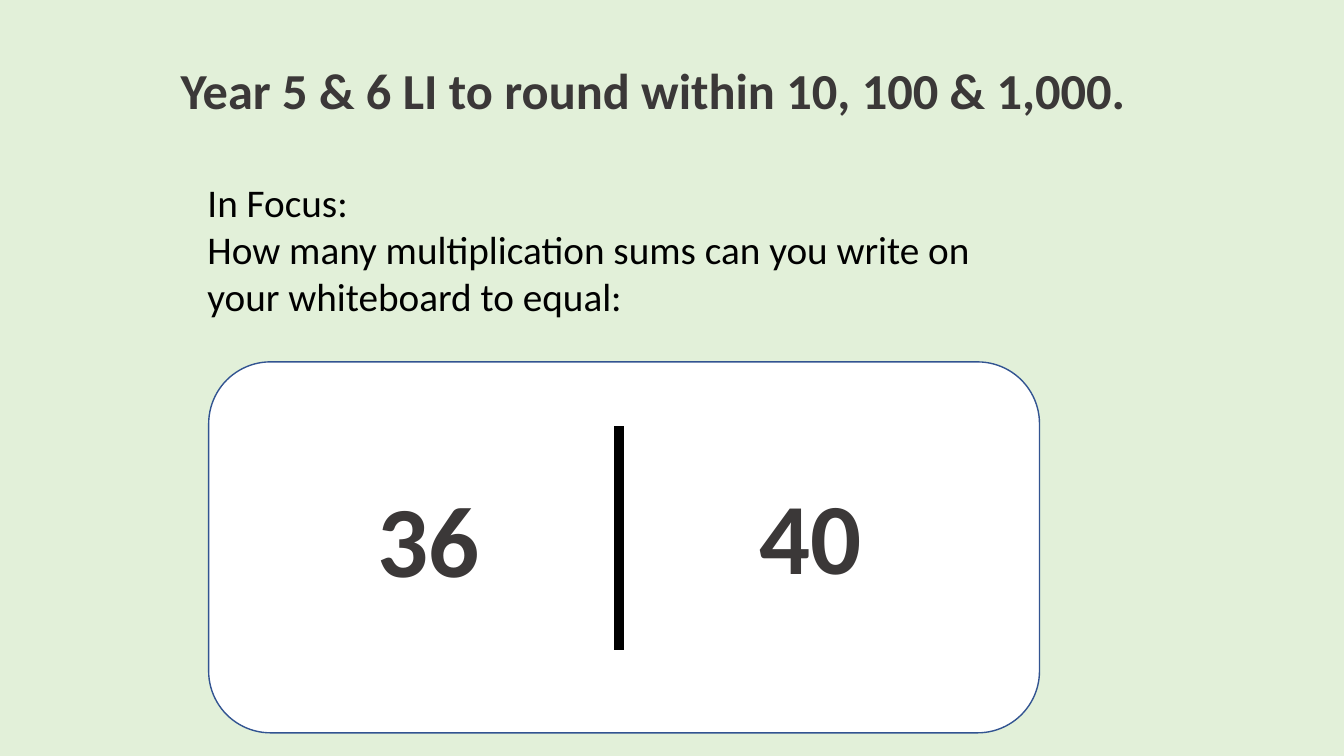
import pptx
import pptx.util
import pptx.dml.color
import pptx.enum.shapes
import pptx.enum.text
import pptx.oxml.ns
import lxml.etree
from pptx.util import Inches

COLORS = {
    "background": "E2F0D9",
    "heading": "3B3838",
    "black": "000000",
    "card": "FFFFFF",
    "card_border": "325491",
}
ALIGN = pptx.enum.text.PP_ALIGN


def color(name):
    return pptx.dml.color.RGBColor.from_string(COLORS[name])


def add_text(slide, box, text, size, color_name, bold, alignment, wrap=True):
    shape = slide.shapes.add_textbox(*[Inches(length) for length in box])
    text_frame = shape.text_frame
    text_frame.text = text
    text_frame.word_wrap = wrap
    text_frame.auto_size = pptx.enum.text.MSO_AUTO_SIZE.SHAPE_TO_FIT_TEXT
    for paragraph in text_frame.paragraphs:
        paragraph.alignment = alignment
        for run in paragraph.runs:
            run.font.name = "Calibri"
            run.font.size = pptx.util.Pt(size)
            run.font.bold = bold
            run.font.color.rgb = color(color_name)


presentation = pptx.Presentation()
presentation.slide_width = Inches(13.33)
presentation.slide_height = Inches(7.5)
slide = presentation.slides.add_slide(presentation.slide_layouts[6])
slide.background.fill.solid()
slide.background.fill.fore_color.rgb = color("background")

# Title and question
add_text(slide, (1.67, 0.54, 9.62, 0.71),
         "Year 5 & 6 LI to round within 10, 100 & 1,000.",
         36, "heading", True, ALIGN.CENTER)
add_text(slide, (1.96, 1.72, 7.94, 1.52),
         "In Focus:\nHow many multiplication sums can you write on\n"
         "your whiteboard to equal:",
         28, "black", False, ALIGN.LEFT)

# Number card
card = slide.shapes.add_shape(
    pptx.enum.shapes.MSO_SHAPE.ROUNDED_RECTANGLE,
    Inches(2.07), Inches(3.59), Inches(8.24), Inches(3.68))
card.shadow.inherit = False
card.fill.solid()
card.fill.fore_color.rgb = color("card")
card.line.color.rgb = color("card_border")
card.line.width = pptx.util.Pt(1)

# Divider
divider = slide.shapes.add_connector(
    pptx.enum.shapes.MSO_CONNECTOR.STRAIGHT,
    Inches(6.14), Inches(4.23), Inches(6.14), Inches(6.45))
divider.line.color.rgb = color("black")
divider.line.width = pptx.util.Pt(7.5)
lxml.etree.SubElement(divider.element.spPr, pptx.oxml.ns.qn("a:effectLst"))

# Target numbers
for number, left, top in (("36", 3.64, 4.68), ("40", 7.42, 4.65)):
    add_text(slide, (left, top, 1.23, 1.31), number,
             72, "heading", True, ALIGN.CENTER, wrap=False)

presentation.save("out.pptx")
